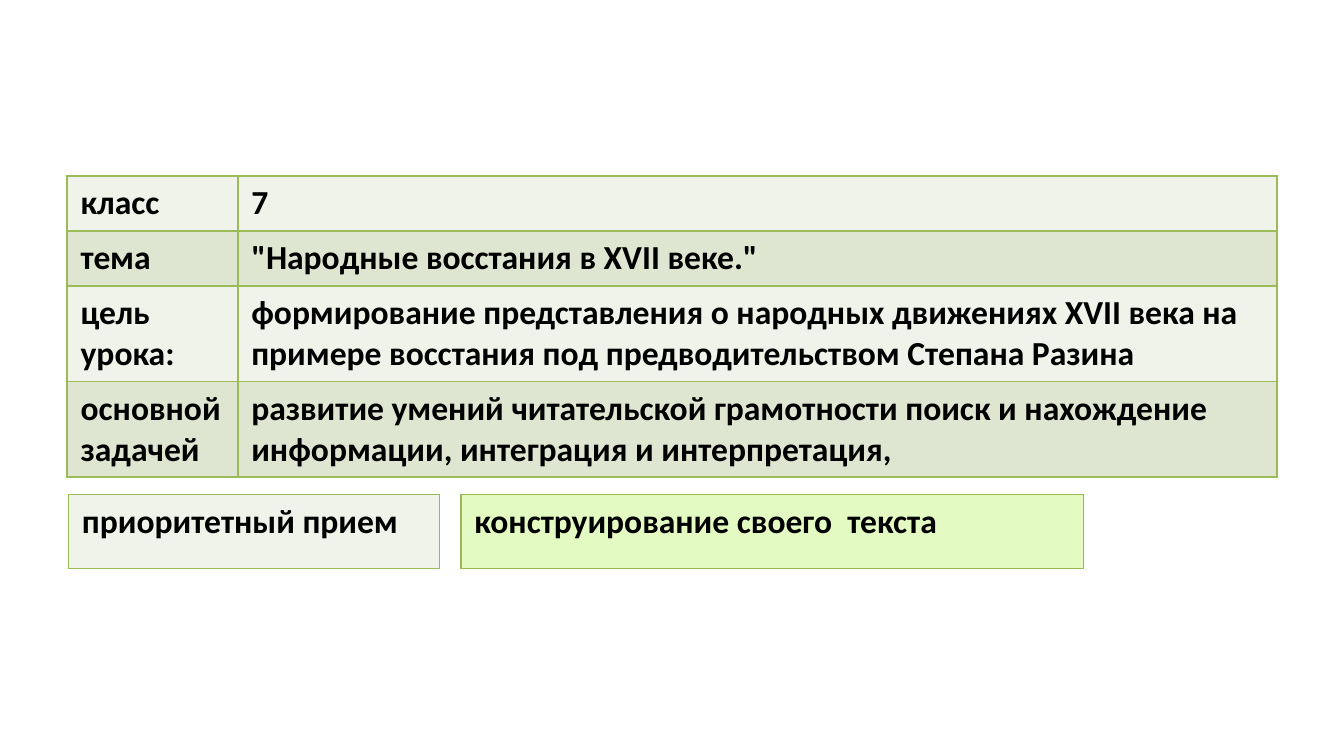
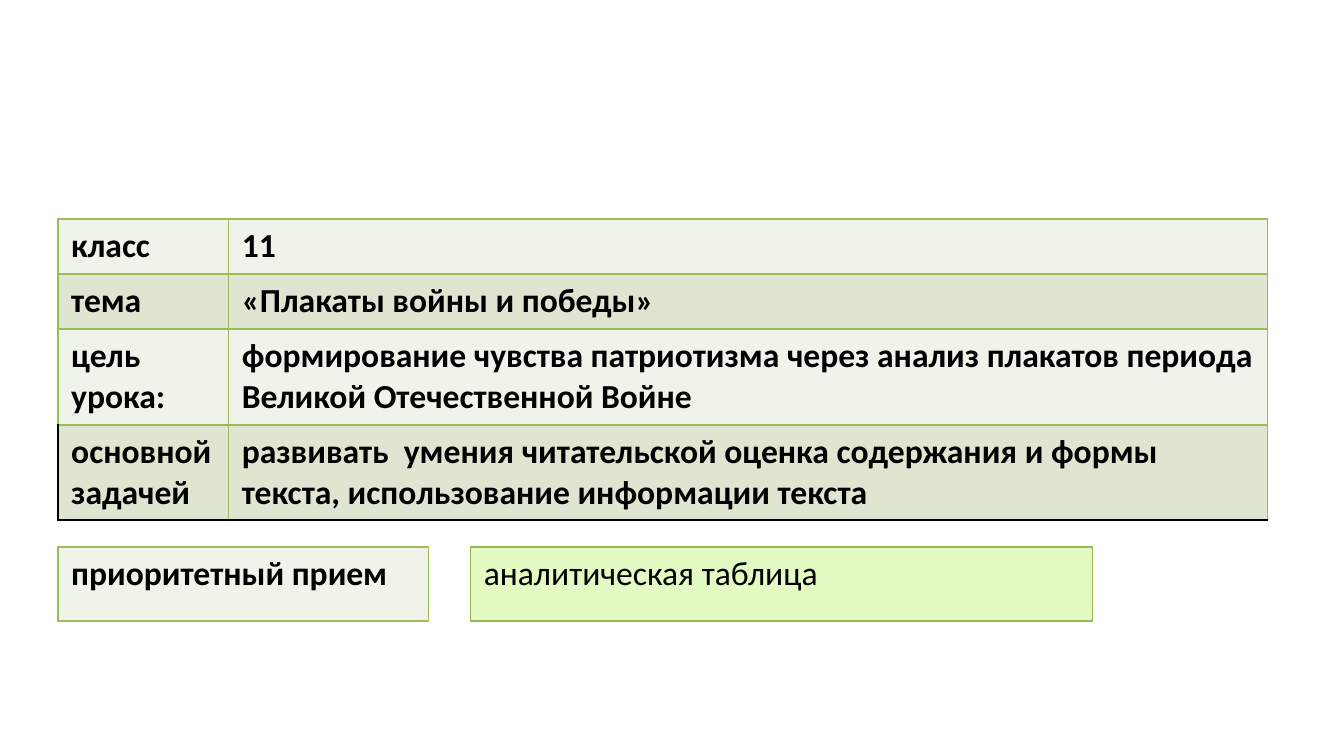
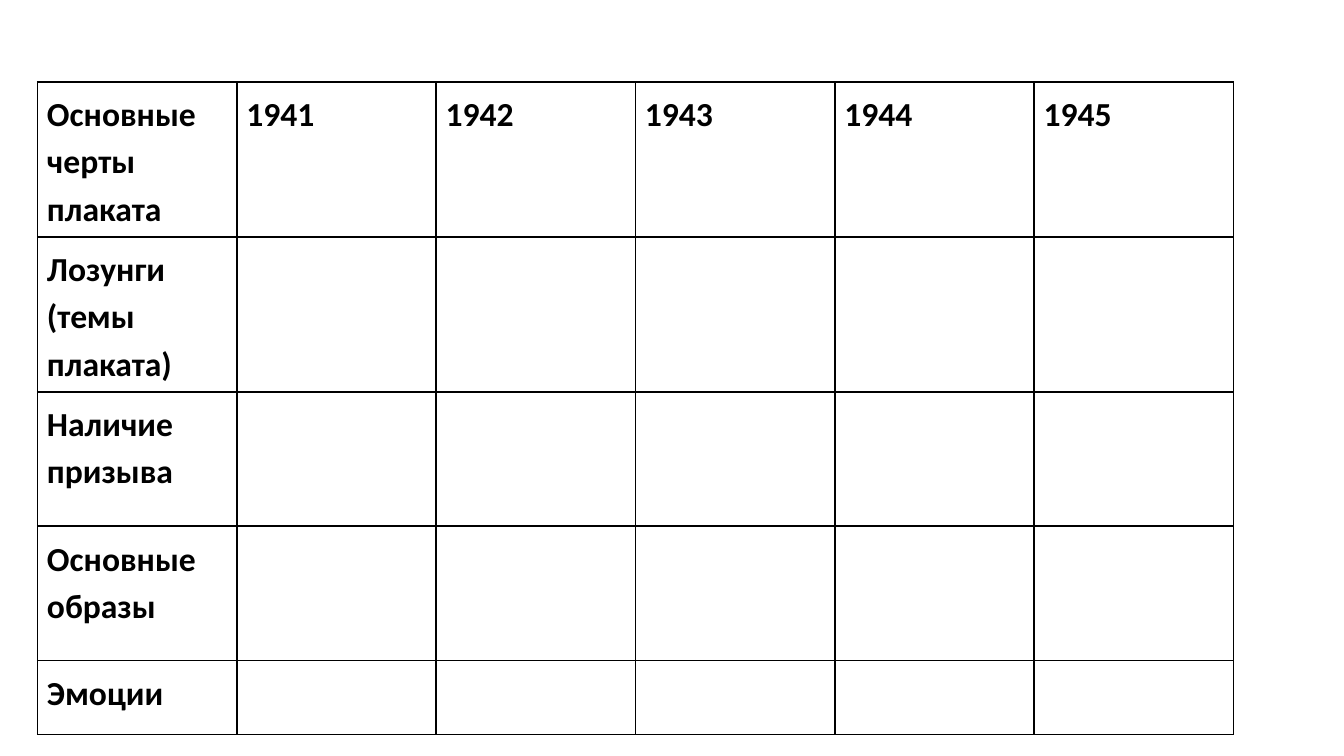
import pptx
import pptx.dml.color
import pptx.oxml
import pptx.oxml.ns
import pptx.util
from pptx.util import Inches

COLORS = {
    "black": "000000",
    "green": "9BBB59",
    "answer_line": "98B855",
    "light_band": "EFF3E9",
    "dark_band": "DEE6D1",
    "answer": "E3FBC2",
}
FONT = "Calibri"
FONT_SIZE = 18
LINE_WIDTH = 0.96
LESSON_LABELS = ["класс", "тема", "цель урока:", "основной задачей"]
POSTER_FEATURES = ["Лозунги (темы плаката)", "Наличие призыва", "Основные образы", "Эмоции"]
YEARS = ["1941", "1942", "1943", "1944", "1945"]


def rgb(name):
    """Return the palette colour with this name."""
    return pptx.dml.color.RGBColor.from_string(COLORS[name])


def set_border(cell, side, color, width=LINE_WIDTH):
    """Replace the border on one side (L, R, T or B) of a cell."""
    properties = cell._tc.get_or_add_tcPr()
    tag = pptx.oxml.ns.qn(f"a:ln{side}")
    line = pptx.oxml.parse_xml(
        f'<a:ln{side} {pptx.oxml.ns.nsdecls("a")} w="{int(pptx.util.Pt(width))}">'
        f'<a:solidFill><a:srgbClr val="{COLORS[color]}"/></a:solidFill></a:ln{side}>'
    )
    current = properties.find(tag)
    if current is None:
        properties.insert("LRTB".index(side), line)
    else:
        properties.replace(current, line)


def write_cell(cell, text, bold, spacing):
    """Put formatted text in a cell."""
    cell.text = text
    paragraph = cell.text_frame.paragraphs[0]
    paragraph.line_spacing = spacing
    paragraph.font.name = FONT
    paragraph.font.size = pptx.util.Pt(FONT_SIZE)
    paragraph.font.bold = bold
    paragraph.font.color.rgb = rgb("black")


def add_grid(slide, left, top, widths, heights, texts, fills,
             line="green", line_width=LINE_WIDTH, bold=True, spacing=None):
    """Add a bordered table whose row fills cycle through the given names."""
    frame = slide.shapes.add_table(
        len(heights), len(widths), Inches(left), Inches(top),
        Inches(sum(widths)), Inches(sum(heights)),
    )
    table = frame.table
    table.first_row = False
    table.horz_banding = False
    for column, width in zip(table.columns, widths):
        column.width = Inches(width)
    for index, (row, height) in enumerate(zip(table.rows, heights)):
        row.height = Inches(height)
        fill = fills[index % len(fills)] if fills else None
        for cell, text in zip(row.cells, texts[index]):
            for side in "LRTB":
                set_border(cell, side, line, line_width)
            if fill:
                cell.fill.solid()
                cell.fill.fore_color.rgb = rgb(fill)
            else:
                cell.fill.background()
            if text:
                write_cell(cell, text, bold, spacing)
    return frame


def add_lesson_table(slide, left, top, details):
    """Add the table that describes a lesson."""
    frame = add_grid(slide, left, top, [1.27, 7.73], [0.41] * 4,
                     list(zip(LESSON_LABELS, details)), ["light_band", "dark_band"])
    frame.height = Inches(2.02)
    return frame.table


def add_technique(slide, label_left, answer_left, top, technique, bold):
    """Add the label and the name of the main teaching technique."""
    add_grid(slide, label_left, top, [2.76], [0.55], [["приоритетный прием"]], ["light_band"])
    add_grid(slide, answer_left, top, [4.63], [0.55], [[technique]], ["answer"],
             "answer_line", 0.75, bold)


def add_poster_table(slide):
    """Add the blank analysis table for posters by year."""
    texts = [["Основные черты плаката"] + YEARS]
    texts += [[feature] + [""] * len(YEARS) for feature in POSTER_FEATURES]
    frame = add_grid(slide, 0.28, 0.61, [8.9 / 6] * 6, [1] * 4 + [0.55], texts, [],
                     "black", spacing=1.15)
    frame.height = Inches(4.57)
    for cell in frame.table.iter_cells():
        cell.margin_left = cell.margin_right = Inches(0.07)
        cell.margin_top = cell.margin_bottom = Inches(0.05)


def main():
    """Build and save the deck."""
    deck = pptx.Presentation()
    deck.slide_width = Inches(10)
    deck.slide_height = Inches(10) * 9 // 16
    blank = deck.slide_layouts[6]

    uprisings = deck.slides.add_slide(blank)
    add_lesson_table(uprisings, 0.5, 1.31, [
        "7",
        '"Народные восстания в XVII веке."',
        "формирование представления о народных движениях XVII века на примере "
        "восстания под предводительством Степана Разина",
        "развитие умений читательской грамотности поиск и нахождение информации, "
        "интеграция и интерпретация,",
    ])
    add_technique(uprisings, 0.51, 3.43, 3.68, "конструирование своего  текста", True)

    posters = deck.slides.add_slide(blank)
    lesson = add_lesson_table(posters, 0.43, 1.63, [
        "11",
        "«Плакаты войны и победы»",
        "формирование чувства патриотизма через анализ плакатов периода "
        "Великой Отечественной Войне",
        "развивать  умения читательской оценка содержания и формы текста, "
        "использование информации текста",
    ])
    set_border(lesson.cell(3, 0), "L", "black")
    for cell in lesson.rows[3].cells:
        set_border(cell, "B", "black")
    add_technique(posters, 0.43, 3.5, 4.07, "аналитическая таблица", False)

    add_poster_table(deck.slides.add_slide(blank))
    deck.save("out.pptx")


if __name__ == "__main__":
    main()
